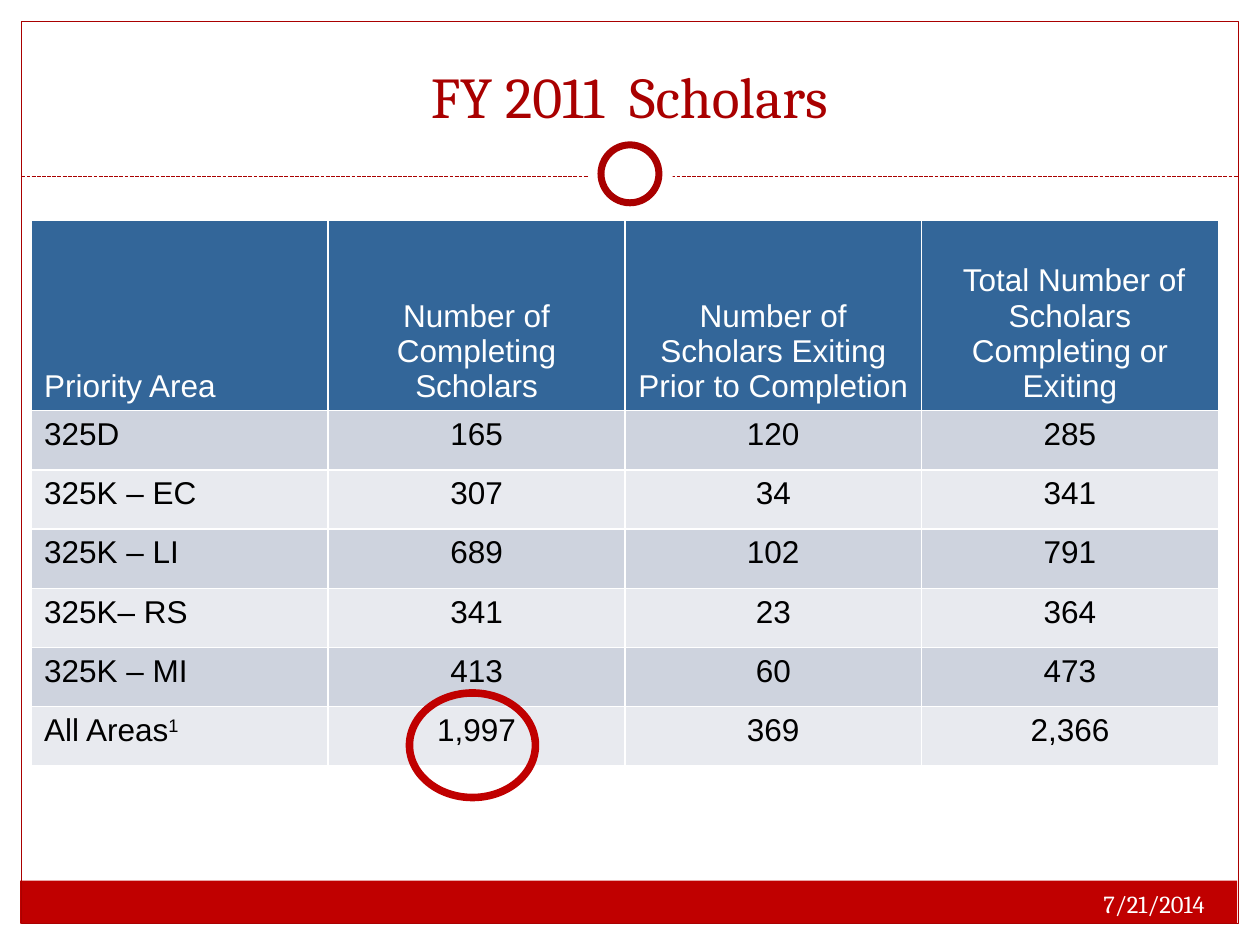
"""Build the FY 2011 scholars slide: framed title, results table and highlighted total."""
import pptx
import pptx.util
import pptx.dml.color
import pptx.enum.dml
import pptx.enum.shapes
import pptx.enum.text
import pptx.oxml
import pptx.oxml.ns

Inches = pptx.util.Inches
Pt = pptx.util.Pt
SHAPE = pptx.enum.shapes.MSO_SHAPE
ALIGN = pptx.enum.text.PP_ALIGN
ANCHOR = pptx.enum.text.MSO_ANCHOR

COLORS = {
    "white": "FFFFFF",
    "black": "000000",
    "frame": "A90000",
    "accent": "C00000",
    "header": "336699",
    "band_dark": "CED3DE",
    "band_light": "E8EAEF",
}

HEADERS = [
    "Priority Area",
    "Number of Completing Scholars",
    "Number of Scholars Exiting Prior to Completion",
    " Total Number of Scholars Completing or Exiting",
]
ROWS = [
    ["325D", "165", "120", "285"],
    ["325K – EC", "307", "34", "341"],
    ["325K – LI", "689", "102", "791"],
    ["325K– RS", "341", "23", "364"],
    ["325K – MI", "413", "60", "473"],
    ["All Areas", "1,997", "369", "2,366"],
]


def rgb(name):
    return pptx.dml.color.RGBColor.from_string(COLORS[name])


def add_run(p, text, font, size, color):
    r = p.add_run()
    r.text = text
    r.font.name = font
    r.font.size = Pt(size)
    r.font.color.rgb = rgb(color)
    return r


def add_outline(s, kind, left, top, width, height, fill=None, line=None, weight=0.75):
    sp = s.shapes.add_shape(kind, Inches(left), Inches(top), Inches(width), Inches(height))
    sp.shadow.inherit = False
    if fill:
        sp.fill.solid()
        sp.fill.fore_color.rgb = rgb(fill)
    else:
        sp.fill.background()
    if line:
        sp.line.color.rgb = rgb(line)
        sp.line.width = Pt(weight)
    else:
        sp.line.fill.background()
    return sp


def add_dashed_rule(s, left, right, y):
    rule = s.shapes.add_connector(
        pptx.enum.shapes.MSO_CONNECTOR.STRAIGHT, Inches(left), Inches(y), Inches(right), Inches(y))
    rule.line.color.rgb = rgb("frame")
    rule.line.width = Pt(0.75)
    rule.line.dash_style = pptx.enum.dml.MSO_LINE.SQUARE_DOT
    rule._element.spPr.append(pptx.oxml.parse_xml(
        f'<a:effectLst {pptx.oxml.ns.nsdecls("a")}/>'))


def add_text(s, text, left, top, width, height, size, color, align, anchor):
    box = s.shapes.add_textbox(Inches(left), Inches(top), Inches(width), Inches(height))
    tf = box.text_frame
    tf.word_wrap = True
    tf.vertical_anchor = anchor
    p = tf.paragraphs[0]
    p.alignment = align
    add_run(p, text, "Cambria", size, color)


def set_borders(cell):
    tcPr = cell._tc.get_or_add_tcPr()
    for i, side in enumerate(("lnL", "lnR", "lnT", "lnB")):
        tcPr.insert(i, pptx.oxml.parse_xml(
            f'<a:{side} {pptx.oxml.ns.nsdecls("a")} w="{Pt(1)}"><a:solidFill>'
            f'<a:srgbClr val="{COLORS["white"]}"/></a:solidFill></a:{side}>'))


def fill_cell(cell, text, fill, color, align, anchor):
    cell.fill.solid()
    cell.fill.fore_color.rgb = rgb(fill)
    cell.vertical_anchor = anchor
    set_borders(cell)
    p = cell.text_frame.paragraphs[0]
    p.alignment = align
    add_run(p, text, "Arial", 18, color)


def add_scholar_table(s):
    rows = [HEADERS] + ROWS
    frame = s.shapes.add_table(
        len(rows), len(HEADERS), Inches(0.25), Inches(1.75), Inches(9.42), Inches(4.33))
    table = frame.table
    for i, values in enumerate(rows):
        table.rows[i].height = Inches(0.47 if i else 1.51)
        if i == 0:
            fill, color, anchor = "header", "white", ANCHOR.BOTTOM
        else:
            fill = "band_dark" if i % 2 else "band_light"
            color, anchor = "black", ANCHOR.TOP
        for j, value in enumerate(values):
            align = ALIGN.CENTER if j else ALIGN.LEFT
            fill_cell(table.cell(i, j), value, fill, color, align, anchor)
    total_label = table.cell(len(ROWS), 0).text_frame.paragraphs[0]
    note = add_run(total_label, "1", "Arial", 18, "black")
    note._r.get_or_add_rPr().set("baseline", "30000")


def main():
    prs = pptx.Presentation()
    prs.slide_width = Inches(10)
    prs.slide_height = Inches(7.5)
    s = prs.slides.add_slide(prs.slide_layouts[6])

    add_outline(s, SHAPE.RECTANGLE, 0.16, 6.99, 9.66, 0.34, fill="accent")
    add_outline(s, SHAPE.RECTANGLE, 0.17, 0.17, 9.66, 7.16, line="frame")
    add_dashed_rule(s, 0.17, 9.83, 1.4)
    add_outline(s, SHAPE.OVAL, 4.67, 1.05, 0.67, 0.67, fill="white")
    add_outline(s, SHAPE.OVAL, 4.77, 1.15, 0.46, 0.46, fill="white", line="frame", weight=4)

    add_text(s, "FY 2011  Scholars", 0.33, 0.25, 9.33, 0.83, 33, "frame",
             ALIGN.CENTER, ANCHOR.BOTTOM)
    add_scholar_table(s)
    add_outline(s, SHAPE.OVAL, 3.25, 5.5, 1, 0.83, line="accent", weight=4.33)
    add_text(s, "7/21/2014", 6.33, 7.01, 3.33, 0.4, 14, "white", ALIGN.RIGHT, ANCHOR.TOP)

    prs.save("out.pptx")


if __name__ == "__main__":
    main()
